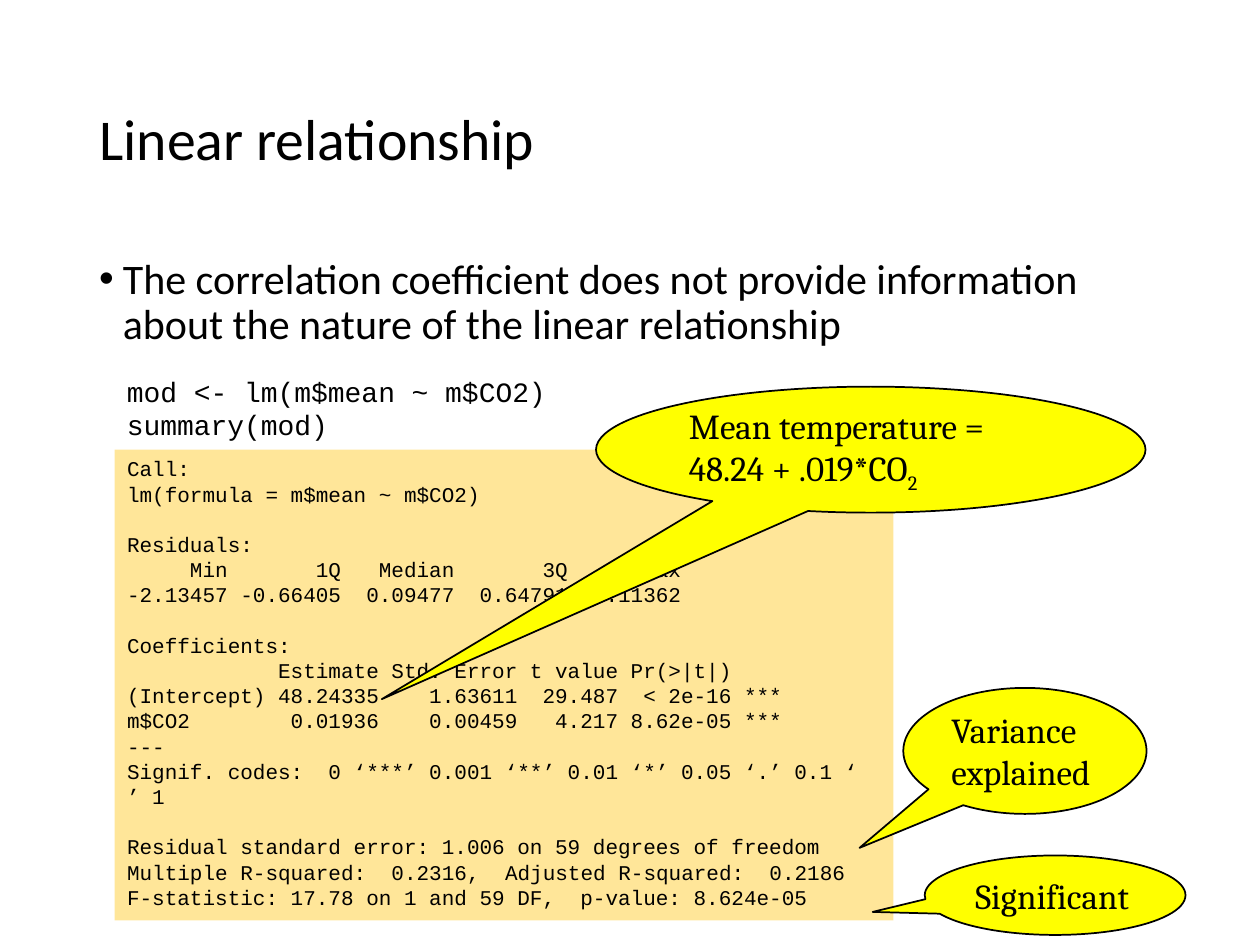
from dataclasses import dataclass

from pptx import Presentation
from pptx.dml.color import RGBColor as Rgb
from pptx.enum.shapes import MSO_SHAPE as Preset
from pptx.enum.text import MSO_ANCHOR as Anchor, MSO_AUTO_SIZE as AutoSize, PP_ALIGN as Align
from pptx.util import Pt


@dataclass(frozen=True)
class Theme:
    """Colours, fonts and type sizes of the deck."""

    ink: Rgb = Rgb(0, 0, 0)
    paper: Rgb = Rgb(255, 255, 255)
    output: Rgb = Rgb(0xFF, 0xE6, 0x99)
    callout: Rgb = Rgb(255, 255, 0)
    text_font: str = "Calibri"
    code_font: str = "Courier New"
    callout_font: str = "Cambria"
    title_size: float = 33
    body_size: float = 24
    callout_size: float = 20
    code_size: float = 16
    output_size: float = 12
    output_gap: float = 14.4


class SlideBuilder:
    """Adds styled elements to one slide."""

    def __init__(self, page, theme):
        self.page = page
        self.theme = theme

    def place(self, shape, box):
        """Move and size a shape."""
        shape.left, shape.top, shape.width, shape.height = map(Pt, box)

    def style(self, para, font, size):
        """Set the font of a paragraph and align it left."""
        para.alignment = Align.LEFT
        para.font.name = font
        para.font.size = Pt(size)
        para.font.color.rgb = self.theme.ink

    def placeholder(self, index, box, text, size, anchor):
        """Fill a template placeholder and return its paragraph."""
        shape = self.page.placeholders[index]
        self.place(shape, box)
        frame = shape.text_frame
        frame.text = text
        frame.auto_size = AutoSize.NONE
        frame.vertical_anchor = anchor
        para = frame.paragraphs[0]
        para.line_spacing = 0.9
        self.style(para, self.theme.text_font, size)
        return para

    def title(self, box, text):
        """Write the slide title."""
        para = self.placeholder(0, box, text, self.theme.title_size, Anchor.MIDDLE)
        para.space_before = Pt(0)

    def bullet(self, box, text):
        """Write the bulleted body text."""
        para = self.placeholder(1, box, text, self.theme.body_size, Anchor.TOP)
        para.space_before = Pt(7.5)
        properties = para._p.get_or_add_pPr()
        properties.set("marL", str(Pt(13.5)))
        properties.set("indent", str(-Pt(13.5)))

    def shape(self, preset, box, fill):
        """Add a filled preset shape without shadow or outline."""
        shape = self.page.shapes.add_shape(preset, *map(Pt, box))
        shape.shadow.inherit = False
        shape.fill.solid()
        shape.fill.fore_color.rgb = fill
        shape.line.fill.background()
        shape.text_frame.word_wrap = True
        return shape

    def code(self, box, blocks, size, fill, gap=0):
        """Add monospaced lines, with a gap between blocks."""
        frame = self.shape(Preset.RECTANGLE, box, fill).text_frame
        frame.vertical_anchor = Anchor.TOP
        frame.text = "\n".join(blocks)
        starts = {block.split("\n")[0] for block in blocks[1:]}
        for para in frame.paragraphs:
            self.style(para, self.theme.code_font, size)
            if para.text in starts:
                para.space_before = Pt(gap)

    def callout(self, box, tip, text, subscript=""):
        """Add an elliptical callout pointing at tip."""
        shape = self.shape(Preset.OVAL_CALLOUT, box, self.theme.callout)
        shape.adjustments[0], shape.adjustments[1] = tip
        shape.line.color.rgb = self.theme.ink
        shape.line.width = Pt(1)
        frame = shape.text_frame
        frame.vertical_anchor = Anchor.MIDDLE
        para = frame.paragraphs[0]
        para.add_run().text = text
        if subscript:
            span = para.add_run()
            span.text = subscript
            span.font._element.set("baseline", "-25000")
        self.style(para, self.theme.callout_font, self.theme.callout_size)


COMMANDS = ["""mod <- lm(m$mean ~ m$CO2)
summary(mod)"""]

SUMMARY = [
    """Call:
lm(formula = m$mean ~ m$CO2)""",
    """Residuals:
     Min       1Q   Median       3Q      Max
-2.13457 -0.66405  0.09477  0.64791  2.11362""",
    """Coefficients:
            Estimate Std. Error t value Pr(>|t|)
(Intercept) 48.24335    1.63611  29.487  < 2e-16 ***
m$CO2        0.01936    0.00459   4.217 8.62e-05 ***
---
Signif. codes:  0 ‘***’ 0.001 ‘**’ 0.01 ‘*’ 0.05 ‘.’ 0.1 ‘ ’ 1""",
    """Residual standard error: 1.006 on 59 degrees of freedom
Multiple R-squared:  0.2316,\tAdjusted R-squared:  0.2186
F-statistic: 17.78 on 1 and 59 DF,  p-value: 8.624e-05""",
]


def main():
    """Build and save the slide."""
    deck = Presentation()
    deck.slide_width, deck.slide_height = Pt(720), Pt(540)
    theme = Theme()
    page = deck.slides.add_slide(deck.slide_layouts[1])
    slide = SlideBuilder(page, theme)

    slide.title((49.5, 28.8, 621, 104.4), "Linear relationship")
    slide.bullet(
        (49.5, 143.8, 621, 342.6),
        "The correlation coefficient does not provide information "
        "about the nature of the linear relationship",
    )
    slide.code((65.5, 210.3, 258, 46), COMMANDS, theme.code_size, theme.paper)
    slide.code((65.5, 257, 445, 269), SUMMARY, theme.output_size, theme.output, theme.output_gap)
    slide.callout((528.5, 488.9, 149, 45.4), (-0.7, 0.21), "Significant")
    slide.callout((516.2, 393.1, 139, 72), (-0.68, 0.77), "Variance explained")
    slide.callout((340.6, 221, 314, 72), (-0.89, 1.98), "Mean temperature = 48.24 + .019*CO", "2")

    deck.save("out.pptx")


if __name__ == "__main__":
    main()
